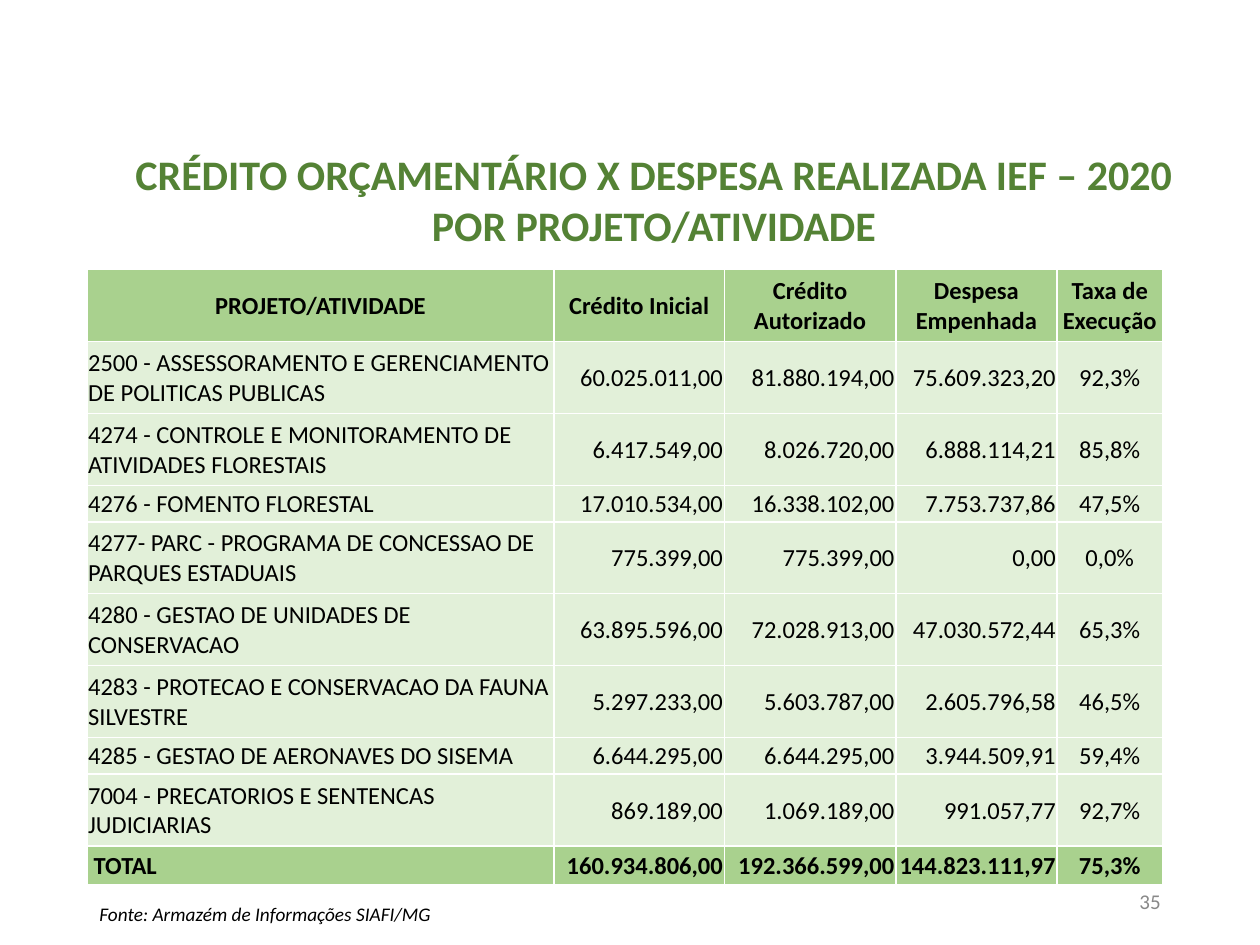
from dataclasses import dataclass

from lxml import etree
from pptx import Presentation
from pptx.dml.color import RGBColor
from pptx.enum.text import MSO_ANCHOR, PP_ALIGN
from pptx.oxml.ns import qn
from pptx.util import Pt

LEFT, CENTER, RIGHT = PP_ALIGN.LEFT, PP_ALIGN.CENTER, PP_ALIGN.RIGHT
TOP, MIDDLE = MSO_ANCHOR.TOP, MSO_ANCHOR.MIDDLE


@dataclass(frozen=True)
class Theme:
    font: str = "Calibri"
    title_color: str = "548235"
    text_color: str = "000000"
    number_color: str = "898989"
    strong_fill: str = "A9D18E"
    light_fill: str = "E2F0D9"
    border_color: str = "FFFFFF"
    title_size: float = 24
    table_size: float = 14
    number_size: float = 12
    source_size: float = 11


@dataclass(frozen=True)
class TextStyle:
    size: float
    color: str
    align: PP_ALIGN
    bold: bool = False
    italic: bool = False


@dataclass(frozen=True)
class Label:
    lines: tuple[str, ...]
    left: float
    top: float
    width: float
    height: float
    anchor: MSO_ANCHOR
    style: TextStyle


@dataclass(frozen=True)
class BudgetRow:
    activity: str
    initial: str
    authorized: str
    committed: str
    rate: str
    height: float

    def texts(self) -> tuple[str, ...]:
        return self.activity, self.initial, self.authorized, self.committed, self.rate


THEME = Theme()

TABLE_LEFT, TABLE_TOP = 49.7, 154.1
COLUMN_WIDTHS = (267, 97.2, 98, 92.2, 60.2)
COLUMN_ALIGNS = (LEFT, RIGHT, RIGHT, RIGHT, CENTER)
TWO_LINES, ONE_LINE, TOTAL_LINE = 41.1, 20.9, 22.3
CELL_FORMAT = {
    "margin_left": Pt(0.7),
    "margin_right": Pt(0.7),
    "margin_top": Pt(0.7),
    "margin_bottom": Pt(0),
    "vertical_anchor": MIDDLE,
}

HEADER = BudgetRow("PROJETO/ATIVIDADE", "Crédito Inicial", "Crédito Autorizado",
                   "Despesa Empenhada", "Taxa de Execução", TWO_LINES)
ACTIVITIES = (
    BudgetRow("2500 - ASSESSORAMENTO E GERENCIAMENTO DE POLITICAS PUBLICAS",
              "60.025.011,00", "81.880.194,00", "75.609.323,20", "92,3%", TWO_LINES),
    BudgetRow("4274 - CONTROLE E MONITORAMENTO DE ATIVIDADES FLORESTAIS",
              "6.417.549,00", "8.026.720,00", "6.888.114,21", "85,8%", TWO_LINES),
    BudgetRow("4276 - FOMENTO FLORESTAL",
              "17.010.534,00", "16.338.102,00", "7.753.737,86", "47,5%", ONE_LINE),
    BudgetRow("4277- PARC - PROGRAMA DE CONCESSAO DE PARQUES ESTADUAIS",
              "775.399,00", "775.399,00", "0,00", "0,0%", TWO_LINES),
    BudgetRow("4280 - GESTAO DE UNIDADES DE CONSERVACAO",
              "63.895.596,00", "72.028.913,00", "47.030.572,44", "65,3%", TWO_LINES),
    BudgetRow("4283 - PROTECAO E CONSERVACAO DA FAUNA SILVESTRE",
              "5.297.233,00", "5.603.787,00", "2.605.796,58", "46,5%", TWO_LINES),
    BudgetRow("4285 - GESTAO DE AERONAVES DO SISEMA",
              "6.644.295,00", "6.644.295,00", "3.944.509,91", "59,4%", ONE_LINE),
    BudgetRow("7004 - PRECATORIOS E SENTENCAS JUDICIARIAS",
              "869.189,00", "1.069.189,00", "991.057,77", "92,7%", TWO_LINES),
)
TOTAL = BudgetRow(" TOTAL", "160.934.806,00", "192.366.599,00",
                  "144.823.111,97", "75,3%", TOTAL_LINE)

PAGE_NUMBER = Label(("35",), 508.3, 500.4, 162, 28.8, MIDDLE,
                    TextStyle(THEME.number_size, THEME.number_color, RIGHT))
TITLE = Label(("CRÉDITO ORÇAMENTÁRIO X DESPESA REALIZADA IEF – 2020",
               "POR PROJETO/ATIVIDADE"), 49.7, 81.4, 648, 62.6, TOP,
              TextStyle(THEME.title_size, THEME.title_color, CENTER, bold=True))
SOURCE = Label(("Fonte: Armazém de Informações SIAFI/MG",), 49.7, 514.8, 572.4, 14.4, MIDDLE,
               TextStyle(THEME.source_size, THEME.text_color, LEFT, italic=True))


def write_line(paragraph, text: str, style: TextStyle) -> None:
    paragraph.alignment = style.align
    run = paragraph.add_run()
    run.text = text
    font_format = {"name": THEME.font, "size": Pt(style.size),
                   "bold": style.bold, "italic": style.italic}
    for attribute, value in font_format.items():
        setattr(run.font, attribute, value)
    run.font.color.rgb = RGBColor.from_string(style.color)


def add_label(slide, label: Label) -> None:
    box = slide.shapes.add_textbox(Pt(label.left), Pt(label.top),
                                   Pt(label.width), Pt(label.height))
    frame = box.text_frame
    frame.word_wrap = True
    frame.vertical_anchor = label.anchor
    for index, line in enumerate(label.lines):
        paragraph = frame.add_paragraph() if index else frame.paragraphs[0]
        write_line(paragraph, line, label.style)


def add_borders(cell) -> None:
    properties = cell._tc.get_or_add_tcPr()
    for side in ("a:lnL", "a:lnR", "a:lnT", "a:lnB"):
        line = etree.SubElement(properties, qn(side), w=str(Pt(1)))
        fill = etree.SubElement(line, qn("a:solidFill"))
        etree.SubElement(fill, qn("a:srgbClr"), val=THEME.border_color)


def fill_cell(cell, text: str, fill_color: str, style: TextStyle) -> None:
    for attribute, value in CELL_FORMAT.items():
        setattr(cell, attribute, value)
    add_borders(cell)
    cell.fill.solid()
    cell.fill.fore_color.rgb = RGBColor.from_string(fill_color)
    write_line(cell.text_frame.paragraphs[0], text, style)


def add_budget_table(slide) -> None:
    rows = (HEADER, *ACTIVITIES, TOTAL)
    table = slide.shapes.add_table(
        len(rows), len(COLUMN_WIDTHS), Pt(TABLE_LEFT), Pt(TABLE_TOP),
        Pt(sum(COLUMN_WIDTHS)), Pt(sum(row.height for row in rows))).table
    table.first_row = table.horz_banding = False
    for column, width in zip(table.columns, COLUMN_WIDTHS):
        column.width = Pt(width)
    for table_row, row in zip(table.rows, rows):
        table_row.height = Pt(row.height)
        strong = row in (HEADER, TOTAL)
        fill_color = THEME.strong_fill if strong else THEME.light_fill
        for cell, text, column_align in zip(table_row.cells, row.texts(), COLUMN_ALIGNS):
            align = CENTER if row is HEADER else column_align
            style = TextStyle(THEME.table_size, THEME.text_color, align, bold=strong)
            fill_cell(cell, text, fill_color, style)


def main() -> None:
    presentation = Presentation()
    presentation.slide_width, presentation.slide_height = Pt(720), Pt(540)
    slide = presentation.slides.add_slide(presentation.slide_layouts[6])
    add_label(slide, PAGE_NUMBER)
    add_label(slide, TITLE)
    add_budget_table(slide)
    add_label(slide, SOURCE)
    presentation.save("out.pptx")


if __name__ == "__main__":
    main()
